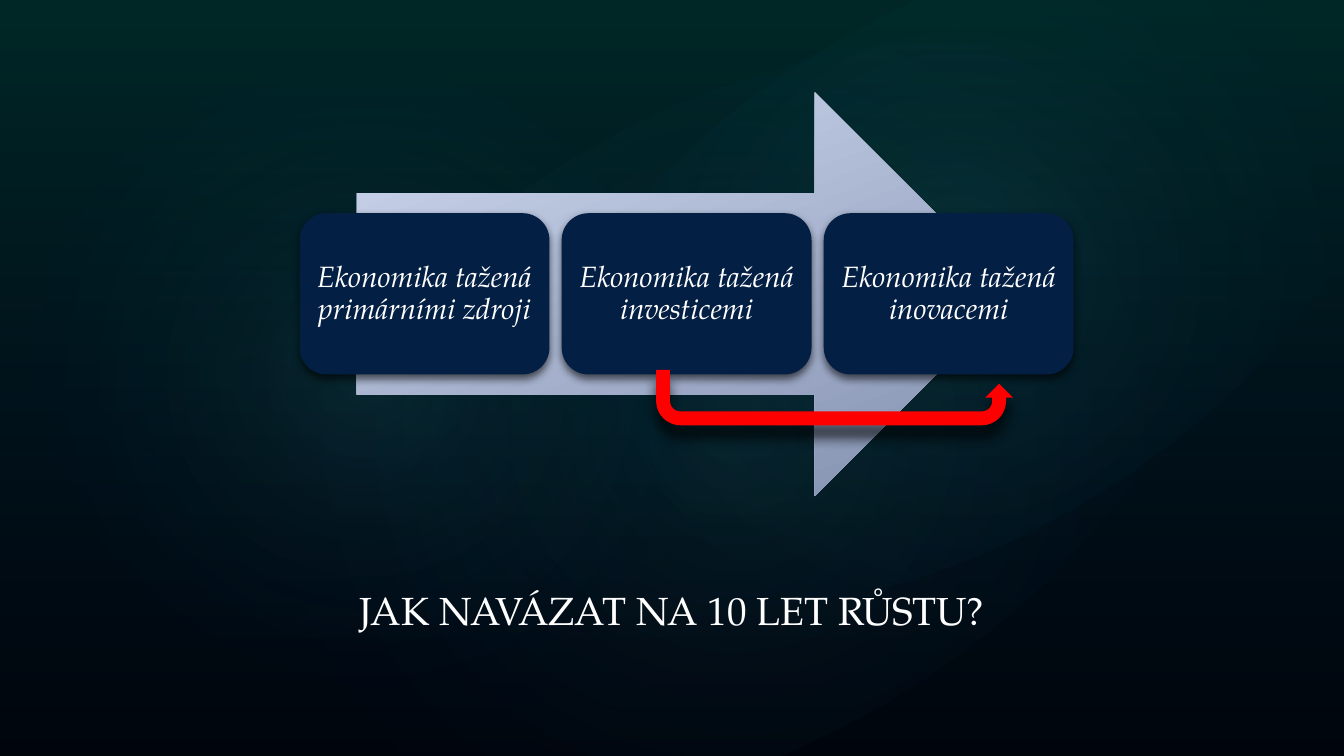
from pptx import Presentation
from pptx.dml.color import RGBColor
from pptx.enum.shapes import MSO_SHAPE as SHAPE
from pptx.enum.text import MSO_ANCHOR as ANCHOR, PP_ALIGN as ALIGN
from pptx.oxml import parse_xml
from pptx.oxml.ns import nsdecls, qn
from pptx.util import Pt

# Content
HEADING = "JAK NAVÁZAT NA 10 LET RŮSTU?"
STAGES = [
    "Ekonomika tažená primárními zdroji",
    "Ekonomika tažená investicemi",
    "Ekonomika tažená inovacemi",
]

# Style
FONT = "TeX Gyre Pagella"
BLACK = RGBColor(0x00, 0x00, 0x00)
WHITE = RGBColor(0xFF, 0xFF, 0xFF)
NAVY = RGBColor(0x04, 0x1F, 0x44)
RED = RGBColor(0xFF, 0x00, 0x00)
TEAL = RGBColor(0x03, 0x70, 0x6E)
BLUE = RGBColor(0x07, 0x3E, 0x87)
CYAN = RGBColor(0x5A, 0xFB, 0xF8)
PALE = RGBColor(0xCF, 0xD9, 0xEF)
STEEL = RGBColor(0x81, 0x8F, 0xAF)

# Layout in points: left, top, width, height
SLIDE_W, SLIDE_H = 960, 540
GLOWS = [  # box, rotation, opacity of the centre in percent
    ((144, 82, 760, 449), 328.7, 7),
    ((44, 33, 436, 470), 294.3, 8),
    ((344, 9, 680, 374), 328.7, 8),
]
HEADING_BOX = (145.5, 384, 669, 72)
ARROW_BOX = (255, 66, 471, 288)
STAGE_LEFT, STAGE_TOP, STAGE_W, STAGE_H = 214, 152.3, 178.5, 115.2
STAGE_STEP = 187.2
JUMP_BOX = (468.7, 264.2, 254.9, 39.6)


def add_plain(kind, box):
    shape = slide.shapes.add_shape(kind, *map(Pt, box))
    shape.shadow.inherit = False
    shape.line.fill.background()
    return shape


def add_solid(kind, box, color):
    shape = add_plain(kind, box)
    shape.fill.solid()
    shape.fill.fore_color.rgb = color
    return shape


def set_gradient(shape, stops, angle=None):
    """Stops are (position, colour, opacity) in percent; no angle means radial."""
    stop_xml = "".join(
        f'<a:gs pos="{pos * 1000}"><a:srgbClr val="{color}">'
        f'<a:alpha val="{opacity * 1000}"/></a:srgbClr></a:gs>'
        for pos, color, opacity in stops)
    if angle is None:
        direction = ('<a:path path="circle"><a:fillToRect l="50000" t="50000" '
                     'r="50000" b="50000"/></a:path>')
    else:
        direction = f'<a:lin ang="{angle * 60000}" scaled="0"/>'
    geometry = shape._element.spPr.find(qn("a:prstGeom"))
    geometry.addnext(parse_xml(
        f'<a:gradFill {nsdecls("a")} rotWithShape="1">'
        f'<a:gsLst>{stop_xml}</a:gsLst>{direction}</a:gradFill>'))


def set_shadow(shape, opacity, blur, distance):
    shape._element.spPr.find(qn("a:effectLst")).append(parse_xml(
        f'<a:outerShdw {nsdecls("a")} blurRad="{Pt(blur)}" dist="{Pt(distance)}" '
        f'dir="5400000" algn="ctr" rotWithShape="0"><a:srgbClr val="{BLACK}">'
        f'<a:alpha val="{opacity * 1000}"/></a:srgbClr></a:outerShdw>'))


def set_text(shape, text, size, anchor, italic=False):
    frame = shape.text_frame
    frame.text = text
    frame.word_wrap = True
    frame.vertical_anchor = anchor
    paragraph = frame.paragraphs[0]
    paragraph.alignment = ALIGN.CENTER
    font = paragraph.runs[0].font
    font.name, font.size, font.italic = FONT, Pt(size), italic
    font.color.rgb = WHITE
    return frame


prs = Presentation()
prs.slide_width, prs.slide_height = Pt(SLIDE_W), Pt(SLIDE_H)
slide = prs.slides.add_slide(prs.slide_layouts[5])

# Background: black, a vertical tint and three soft glows
slide.background.fill.solid()
slide.background.fill.fore_color.rgb = BLACK
tint = add_plain(SHAPE.RECTANGLE, (0, 0, SLIDE_W, SLIDE_H))
set_gradient(tint, [(0, TEAL, 36), (100, BLUE, 10)], angle=90)
for box, rotation, opacity in GLOWS:
    glow = add_plain(SHAPE.OVAL, box)
    glow.rotation = rotation
    set_gradient(glow, [(0, CYAN, opacity), (58, BLUE, 0)])

# Heading, brought in front of the background
heading = slide.shapes.title
slide.shapes._spTree.append(heading._element)
heading.left, heading.top, heading.width, heading.height = map(Pt, HEADING_BOX)
set_text(heading, HEADING, 28, ANCHOR.BOTTOM)

# Growth arrow behind the stages
growth = add_plain(SHAPE.RIGHT_ARROW, ARROW_BOX)
set_gradient(growth, [(0, PALE, 100), (100, STEEL, 100)], angle=69)

# Stages
for i, label in enumerate(STAGES):
    box = (STAGE_LEFT + i * STAGE_STEP, STAGE_TOP, STAGE_W, STAGE_H)
    stage = add_solid(SHAPE.ROUNDED_RECTANGLE, box, NAVY)
    set_shadow(stage, 60, 6, 3)
    frame = set_text(stage, label, 21, ANCHOR.MIDDLE, italic=True)
    frame.margin_left = frame.margin_right = Pt(6)
    frame.paragraphs[0].line_spacing = 0.9

# Jump from investment to innovation
jump = add_solid(SHAPE.U_TURN_ARROW, JUMP_BOX, RED)
jump._element.spPr.find(qn("a:xfrm")).set("flipV", "1")
set_shadow(jump, 70, 9, 9)

prs.save("out.pptx")
